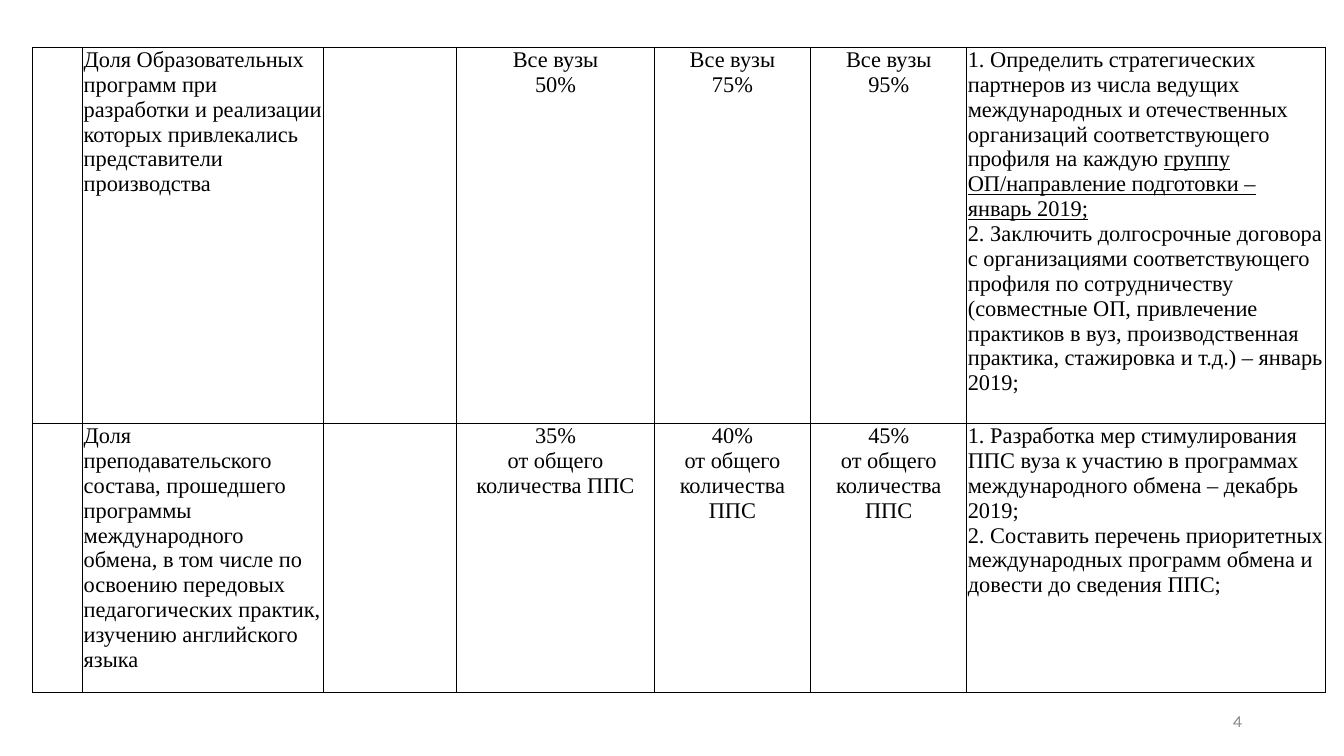
from lxml import etree
from pptx import Presentation
from pptx.dml.color import RGBColor
from pptx.enum.text import MSO_ANCHOR, PP_ALIGN
from pptx.oxml.ns import qn
from pptx.util import Inches, Pt

LEFT, MID, RIGHT = PP_ALIGN.LEFT, PP_ALIGN.CENTER, PP_ALIGN.RIGHT
CENTER = MSO_ANCHOR.MIDDLE
BLACK = RGBColor(0x00, 0x00, 0x00)
GREY = RGBColor(0x8C, 0x8C, 0x8C)
SERIF, SANS = "Times New Roman", "Karla"

COLS = [0.5, 2.39, 1.32, 1.96, 1.55, 1.55, 3.56]
ROWS = [3.46, 2.47]
TARGETS = range(3, 6)
STAFF = "от общего количества ППС"

# Each cell is a list of paragraphs, each paragraph a list of (text, underlined) runs.
def plain(*lines):
    return [[(line, False)] for line in lines]


GOALS = [
    [
        [],
        plain("Доля Образовательных программ при разработки и реализации "
              "которых привлекались представители производства"),
        [],
        *[plain("Все вузы", share) for share in ("50%", "75%", "95%")],
        [
            [("1. Определить стратегических партнеров из числа ведущих "
              "международных и отечественных организаций соответствующего "
              "профиля на каждую ", False),
             ("группу ОП/направление подготовки – январь 2019;", True)],
            *plain("2. Заключить долгосрочные договора с организациями "
                   "соответствующего профиля по сотрудничеству (совместные ОП, "
                   "привлечение практиков в вуз, производственная практика, "
                   "стажировка и т.д.) – январь 2019;"),
        ],
    ],
    [
        [],
        plain("Доля преподавательского состава, прошедшего программы "
              "международного обмена, в том числе по освоению передовых "
              "педагогических практик, изучению английского языка"),
        [],
        *[plain(share, STAFF) for share in ("35%", "40%", "45%")],
        plain("1. Разработка мер стимулирования ППС вуза к участию в "
              "программах международного обмена – декабрь 2019;",
              "2. Составить перечень приоритетных международных программ "
              "обмена и довести до сведения ППС;"),
    ],
]


def write(frame, paras, align, face, size, color):
    for i, runs in enumerate(paras):
        para = frame.paragraphs[0] if i == 0 else frame.add_paragraph()
        para.alignment = align
        for text, under in runs:
            run = para.add_run()
            run.text = text
            font = run.font
            font.name, font.size = face, Pt(size)
            font.color.rgb = color
            if under:
                font.underline = True


def border(cell):
    props = cell._tc.get_or_add_tcPr()
    for i, side in enumerate(("lnL", "lnR", "lnT", "lnB")):
        line = etree.Element(qn("a:" + side), w=str(Pt(1)))
        fill = etree.SubElement(line, qn("a:solidFill"))
        etree.SubElement(fill, qn("a:srgbClr"), val=str(BLACK))
        props.insert(i, line)


def goal_table(slide, left, top):
    frame = slide.shapes.add_table(
        len(ROWS), len(COLS), Inches(left), Inches(top),
        Inches(sum(COLS)), Inches(sum(ROWS)))
    table = frame.table
    table.first_row = table.horz_banding = False
    for col, width in zip(table.columns, COLS):
        col.width = Inches(width)
    for row, height, goal in zip(table.rows, ROWS, GOALS):
        row.height = Inches(height)
        for i, (cell, paras) in enumerate(zip(row.cells, goal)):
            cell.fill.background()
            cell.margin_left = cell.margin_right = Inches(0.01)
            cell.margin_top = cell.margin_bottom = 0
            border(cell)
            align = MID if i in TARGETS else LEFT
            write(cell.text_frame, paras, align, SERIF, 16, BLACK)


def page_number(slide, left, top, width, height):
    box = slide.shapes.add_textbox(
        Inches(left), Inches(top), Inches(width), Inches(height))
    frame = box.text_frame
    frame.word_wrap = True
    frame.vertical_anchor = CENTER
    write(frame, plain("4"), RIGHT, SANS, 12, GREY)


def main():
    deck = Presentation()
    deck.slide_width, deck.slide_height = Inches(13.33), Inches(7.5)
    slide = deck.slides.add_slide(deck.slide_layouts[6])
    page_number(slide, 9.42, 6.95, 3, 0.4)
    goal_table(slide, 0.32, 0.47)
    deck.save("out.pptx")


if __name__ == "__main__":
    main()
